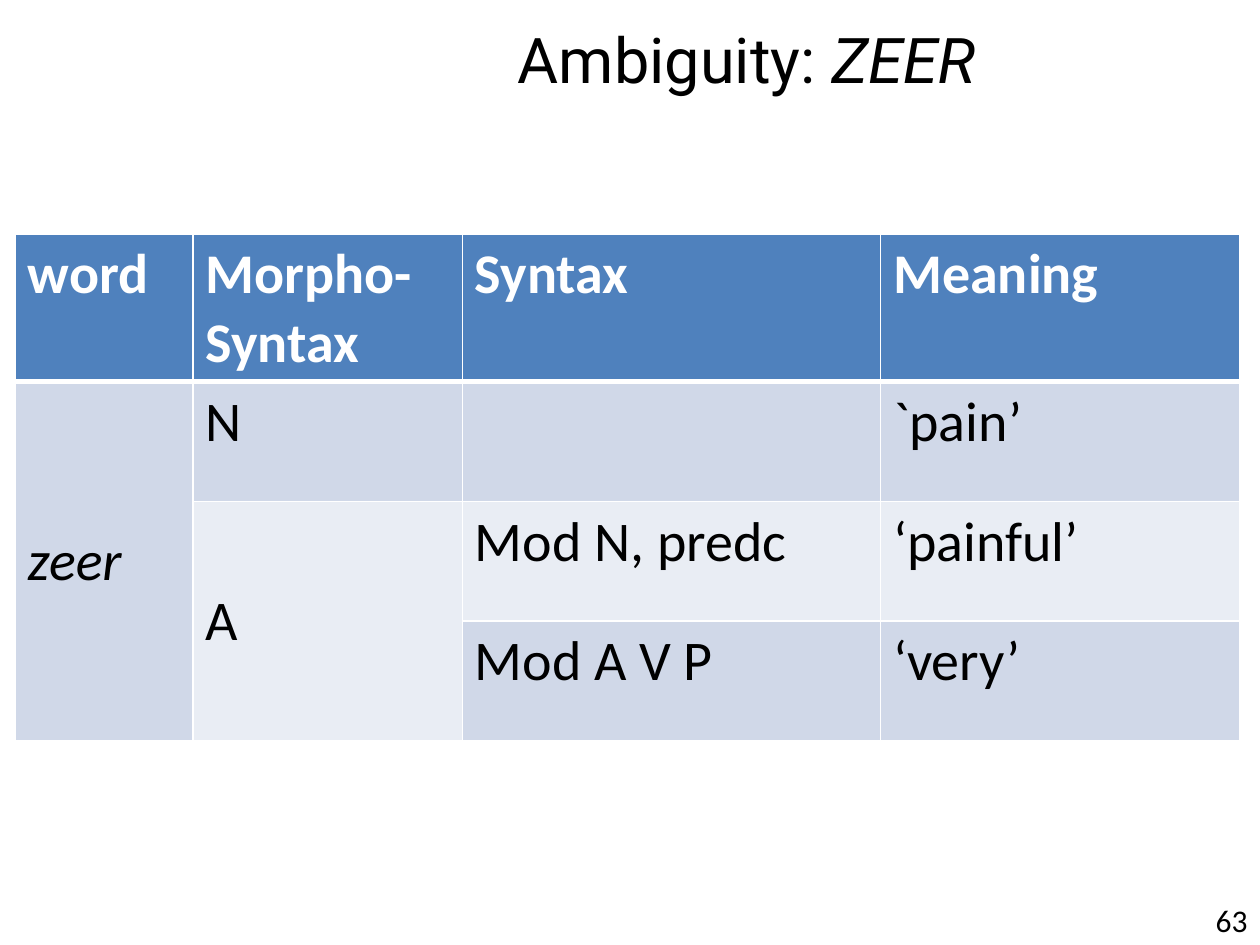
from lxml import etree
from pptx import Presentation
from pptx.dml.color import RGBColor
from pptx.enum.text import MSO_ANCHOR, PP_ALIGN
from pptx.oxml.ns import qn
from pptx.util import Inches, Pt

TOP, MIDDLE = MSO_ANCHOR.TOP, MSO_ANCHOR.MIDDLE
LEFT, CENTER, RIGHT = PP_ALIGN.LEFT, PP_ALIGN.CENTER, PP_ALIGN.RIGHT
BLACK, WHITE = "000000", "FFFFFF"
HEAD, DARK, LIGHT = "4F81BD", "D0D8E8", "E9EDF4"

COLS = [1.41, 2.14, 3.32, 2.85]
ROWS = [1.17, 0.95, 0.95, 0.95]
BANDS = [HEAD, DARK, LIGHT, DARK]
WORDS = [
    ["word", "Morpho-\nSyntax", "Syntax", "Meaning"],
    ["zeer", "N", "", "`pain’"],
    ["", "A", "Mod N, predc", "‘painful’"],
    ["", "", "Mod A V P", "‘very’"],
]
SPANS = [((1, 0), (3, 0)), ((2, 1), (3, 1))]


def color(code):
    return RGBColor.from_string(code)


class Deck:
    font = "Calibri"

    def __init__(self):
        self.prs = Presentation()
        self.prs.slide_width, self.prs.slide_height = Inches(10), Inches(7.5)
        self.slide = self.prs.slides.add_slide(self.prs.slide_layouts[5])

    def style(self, frame, size, code=BLACK, align=LEFT, bold=False, font=None):
        for para in frame.paragraphs:
            para.alignment = align
            for run in para.runs:
                run.font.name = font or self.font
                run.font.size = Pt(size)
                run.font.bold = bold
                run.font.color.rgb = color(code)

    def title(self, box, plain, slanted):
        shape = self.slide.shapes.title
        shape.left, shape.top, shape.width, shape.height = map(Inches, box)
        frame = shape.text_frame
        frame.text = plain
        frame.vertical_anchor = MIDDLE
        run = frame.paragraphs[0].add_run()
        run.text = slanted
        run.font.italic = True
        self.style(frame, 36, align=CENTER, font="Roboto")

    def label(self, box, text, size, align):
        frame = self.slide.shapes.add_textbox(*map(Inches, box)).text_frame
        frame.word_wrap = True
        frame.text = text
        self.style(frame, size, align=align)

    def border(self, cell, sides):
        props = cell._tc.get_or_add_tcPr()
        for side, width in zip("LRTB", sides):
            line = etree.SubElement(props, qn("a:ln" + side), w=str(Pt(width)))
            fill = etree.SubElement(line, qn("a:solidFill"))
            etree.SubElement(fill, qn("a:srgbClr"), val=WHITE)

    def table(self, left, top):
        table = self.slide.shapes.add_table(
            len(ROWS), len(COLS), Inches(left), Inches(top),
            Inches(sum(COLS)), Inches(sum(ROWS))).table
        for col, width in zip(table.columns, COLS):
            col.width = Inches(width)
        for row, height in zip(table.rows, ROWS):
            row.height = Inches(height)
        for r, words in enumerate(WORDS):
            for c, word in enumerate(words):
                cell = table.cell(r, c)
                cell.text_frame.text = word
                self.border(cell, (1, 1, 3 if r == 1 else 1, 3 if r == 0 else 1))
                cell.fill.solid()
                cell.fill.fore_color.rgb = color(BANDS[r])
                cell.vertical_anchor = TOP
                self.style(cell.text_frame, 32, BLACK if r else WHITE, bold=r == 0)
        for start, end in SPANS:
            cell = table.cell(*start)
            cell.merge(table.cell(*end))
            cell.vertical_anchor = MIDDLE
        table.cell(1, 0).text_frame.paragraphs[0].runs[0].font.italic = True


def main():
    deck = Deck()
    deck.title((1.85, 0, 8.15, 0.92), "Ambiguity: ", "ZEER")
    deck.label((8.94, 7.1, 1.06, 0.4), "63", 18, RIGHT)
    deck.table(0.12, 1.86)
    deck.prs.save("out.pptx")


if __name__ == "__main__":
    main()
